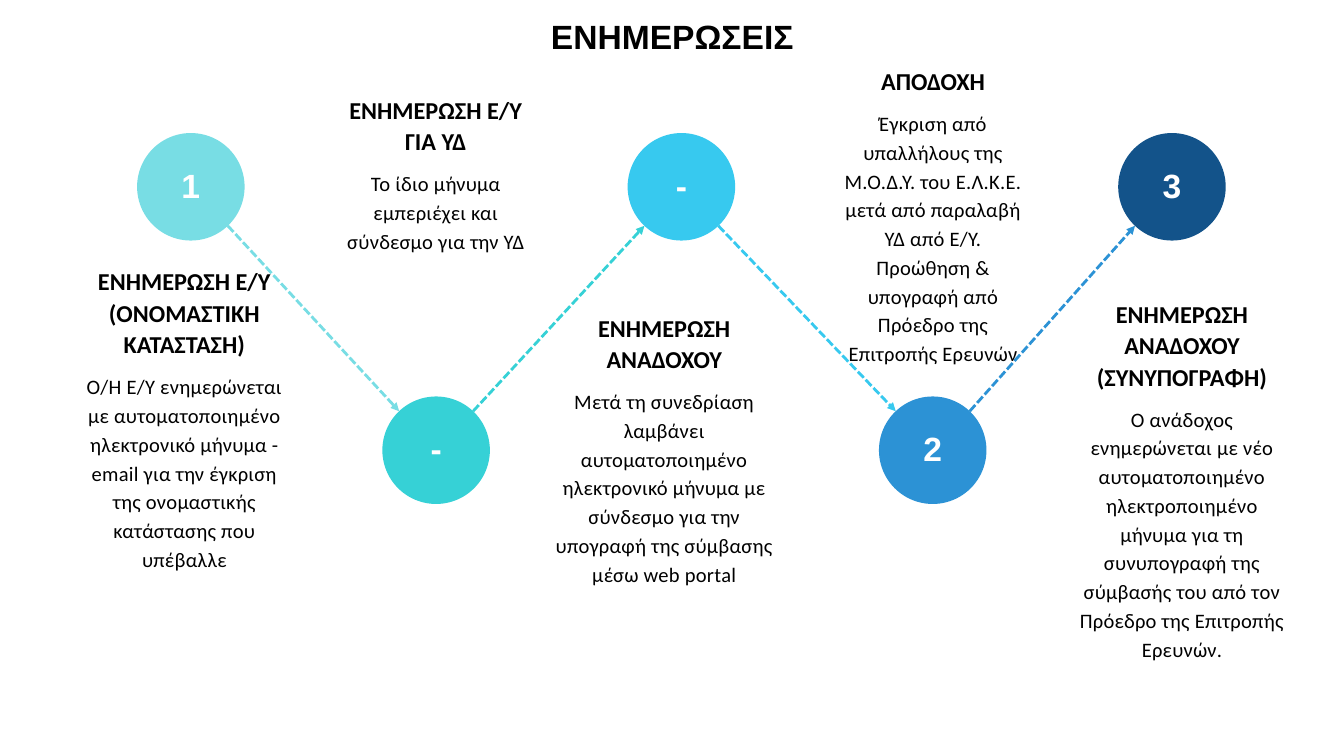
from dataclasses import dataclass

import pptx
import pptx.dml.color
import pptx.enum.dml
import pptx.enum.shapes
import pptx.enum.text
import pptx.oxml
import pptx.oxml.ns
import pptx.util

PX = 9144  # EMU per px, 100 px to the inch


@dataclass(frozen=True)
class Theme:
    ink: str = "000000"
    white: str = "FFFFFF"
    aqua: str = "78DDE4"
    teal: str = "36D1D6"
    sky: str = "37C9EF"
    blue: str = "2C92D5"
    navy: str = "13538A"
    display: str = "Arial"
    copy: str = "Calibri"
    title: float = 36
    heading: float = 26
    body: float = 22
    dash: float = 3


@dataclass(frozen=True)
class Step:
    label: str
    color: str
    x: int  # circle centre
    y: int


@dataclass(frozen=True)
class Note:
    heading: str
    body: str
    left: int
    top: int
    width: int
    heading_lines: int
    body_lines: int


THEME = Theme()
DIAMETER, NUMBER_LIFT = 160, 15
REACH_X, REACH_Y = 55, 58  # from a circle's centre to the end of an arrow
HEADING_LINE, BODY_LINE, NOTE_GAP = 47, 43, 17
UPPER, LOWER = 278, 670

STEPS = [
    Step("1", THEME.aqua, 284, UPPER),
    Step("-", THEME.teal, 649, LOWER),
    Step("-", THEME.sky, 1014, UPPER),
    Step("2", THEME.blue, 1388, LOWER),
    Step("3", THEME.navy, 1744, UPPER),
]

NOTES = [
    Note("ΕΝΗΜΕΡΩΣΗ Ε/Υ (ΟΝΟΜΑΣΤΙΚΗ ΚΑΤΑΣΤΑΣΗ)",
         "Ο/Η Ε/Υ ενημερώνεται με αυτοματοποιημένο ηλεκτρονικό μήνυμα - email "
         "για την έγκριση της ονομαστικής κατάστασης που υπέβαλλε",
         126, 393, 297, 3, 7),
    Note("ΕΝΗΜΕΡΩΣΗ Ε/Υ ΓΙΑ ΥΔ",
         "Το ίδιο μήνυμα εμπεριέχει και σύνδεσμο για την ΥΔ",
         509, 138, 279, 2, 3),
    Note("ΕΝΗΜΕΡΩΣΗ ΑΝΑΔΟΧΟΥ",
         "Μετά τη συνεδρίαση λαμβάνει αυτοματοποιημένο ηλεκτρονικό μήνυμα με "
         "σύνδεσμο για την υπογραφή της σύμβασης μέσω web portal",
         824, 462, 329, 2, 7),
    Note("ΑΠΟΔΟΧΗ",
         "Έγκριση από υπαλλήλους της Μ.Ο.Δ.Υ. του Ε.Λ.Κ.Ε. μετά από παραλαβή "
         "ΥΔ από Ε/Υ. Προώθηση & υπογραφή από Πρόεδρο της Επιτροπής Ερευνών",
         1249, 95, 279, 1, 9),
    Note("ΕΝΗΜΕΡΩΣΗ ΑΝΑΔΟΧΟΥ (ΣΥΝΥΠΟΓΡΑΦΗ)",
         "Ο ανάδοχος ενημερώνεται με νέο αυτοματοποιημένο ηλεκτροποιημένο "
         "μήνυμα για τη συνυπογραφή της σύμβασής του από τον Πρόεδρο της "
         "Επιτροπής Ερευνών.",
         1604, 441, 310, 3, 9),
]


def px(length: int) -> pptx.util.Emu:
    return pptx.util.Emu(length * PX)


def rgb(color: str) -> pptx.dml.color.RGBColor:
    return pptx.dml.color.RGBColor.from_string(color)


def write(frame, text: str, *, font: str, size: float, leading: float,
          color: str = THEME.ink, bold: bool = True, tracking: int = 0) -> None:
    """Set one centred paragraph; tracking is in hundredths of a point."""
    frame.margin_left = frame.margin_right = 0
    frame.margin_top = frame.margin_bottom = 0
    para = frame.paragraphs[0]
    para.alignment = pptx.enum.text.PP_ALIGN.CENTER
    para.line_spacing = pptx.util.Pt(leading)
    span = para.add_run()
    span.text = text
    span.font.name = font
    span.font.size = pptx.util.Pt(size)
    span.font.bold = bold
    span.font.color.rgb = rgb(color)
    if tracking:
        span._r.get_or_add_rPr().set("spc", str(tracking))


def add_text(page, text: str, left: int, top: int, width: int, height: int,
             **style) -> None:
    box = page.shapes.add_textbox(px(left), px(top), px(width), px(height))
    frame = box.text_frame
    frame.word_wrap = True
    frame.auto_size = pptx.enum.text.MSO_AUTO_SIZE.SHAPE_TO_FIT_TEXT
    write(frame, text, **style)


def add_step(page, step: Step) -> None:
    circle = page.shapes.add_shape(
        pptx.enum.shapes.MSO_SHAPE.OVAL,
        px(step.x - DIAMETER // 2), px(step.y - DIAMETER // 2),
        px(DIAMETER), px(DIAMETER))
    circle.shadow.inherit = False
    circle.fill.solid()
    circle.fill.fore_color.rgb = rgb(step.color)
    circle.line.fill.background()
    frame = circle.text_frame
    frame.vertical_anchor = pptx.enum.text.MSO_ANCHOR.MIDDLE
    write(frame, step.label, font=THEME.display, size=THEME.title,
          leading=50.4, color=THEME.white)
    frame.margin_bottom = px(NUMBER_LIFT)


def add_arrow(page, start: Step, end: Step) -> None:
    reach_y = REACH_Y if end.y > start.y else -REACH_Y
    arrow = page.shapes.add_connector(
        pptx.enum.shapes.MSO_CONNECTOR.STRAIGHT,
        px(start.x + REACH_X), px(start.y + reach_y),
        px(end.x - REACH_X), px(end.y - reach_y))
    arrow.line.color.rgb = rgb(start.color)
    arrow.line.width = pptx.util.Pt(THEME.dash)
    arrow.line.dash_style = pptx.enum.dml.MSO_LINE.SQUARE_DOT
    # Arrowhead and empty effect list
    qn = pptx.oxml.ns.qn
    tail = pptx.oxml.parse_xml(
        f'<a:tailEnd {pptx.oxml.ns.nsdecls("a")} type="triangle"/>')
    arrow.line._get_or_add_ln().append(tail)
    properties = arrow._element.spPr
    properties.append(properties.makeelement(qn("a:effectLst"), {}))


def add_note(page, note: Note) -> None:
    heading_height = note.heading_lines * HEADING_LINE
    add_text(page, note.heading, note.left, note.top, note.width,
             heading_height, font=THEME.copy, size=THEME.heading, leading=33.8)
    add_text(page, note.body, note.left, note.top + heading_height + NOTE_GAP,
             note.width, note.body_lines * BODY_LINE, font=THEME.copy,
             size=THEME.body, leading=30.8, bold=False, tracking=30)


def main() -> None:
    deck = pptx.Presentation()
    deck.slide_width, deck.slide_height = px(2000), px(1125)
    page = deck.slides.add_slide(deck.slide_layouts[6])

    # Zigzag of steps
    for step in STEPS:
        add_step(page, step)
    for start, end in zip(STEPS, STEPS[1:]):
        add_arrow(page, start, end)

    # Explanations and title
    for note in NOTES:
        add_note(page, note)
    add_text(page, "ΕΝΗΜΕΡΩΣΕΙΣ", 387, 18, 1227, 64,
             font=THEME.display, size=THEME.title, leading=46.8)

    deck.save("out.pptx")


if __name__ == "__main__":
    main()
